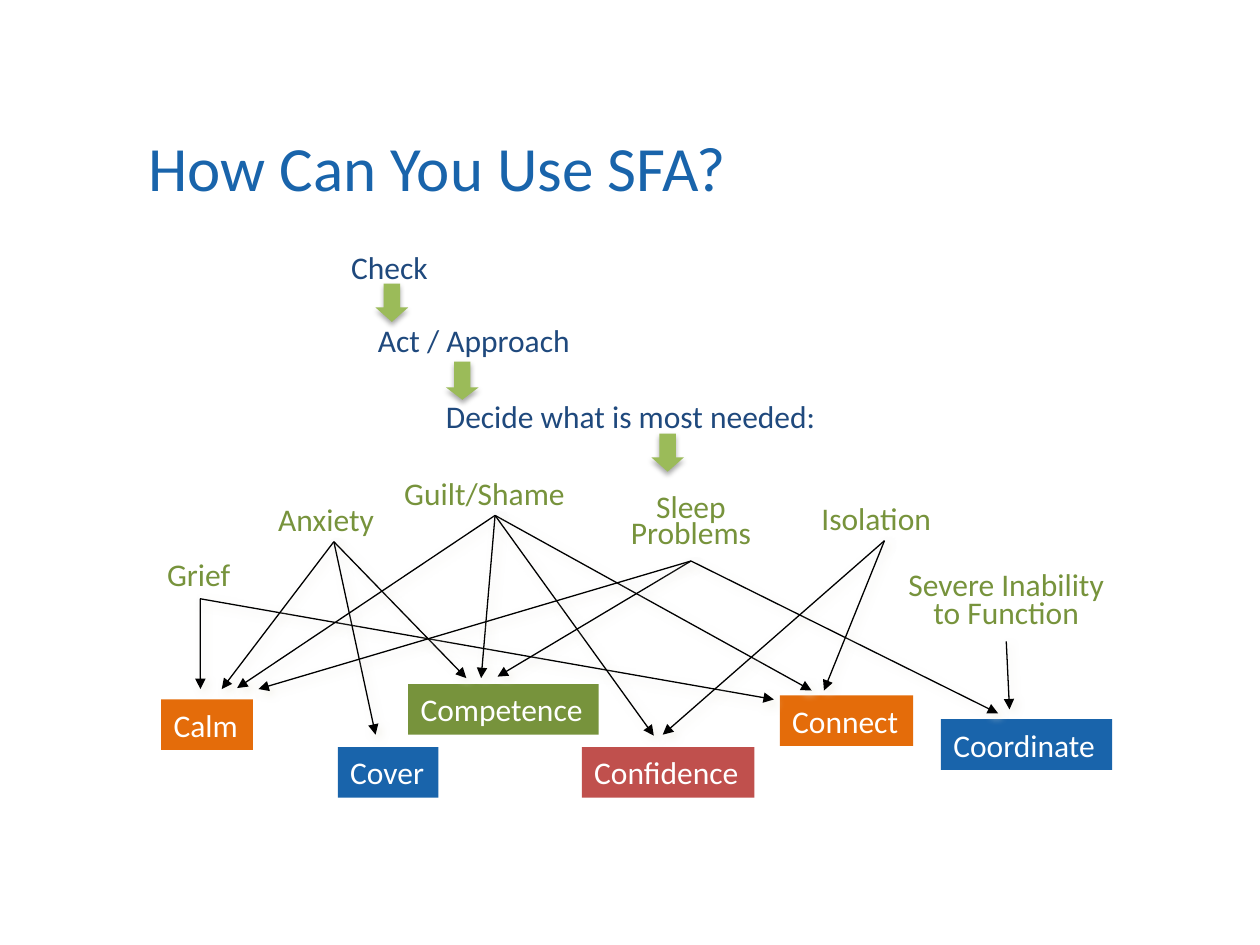
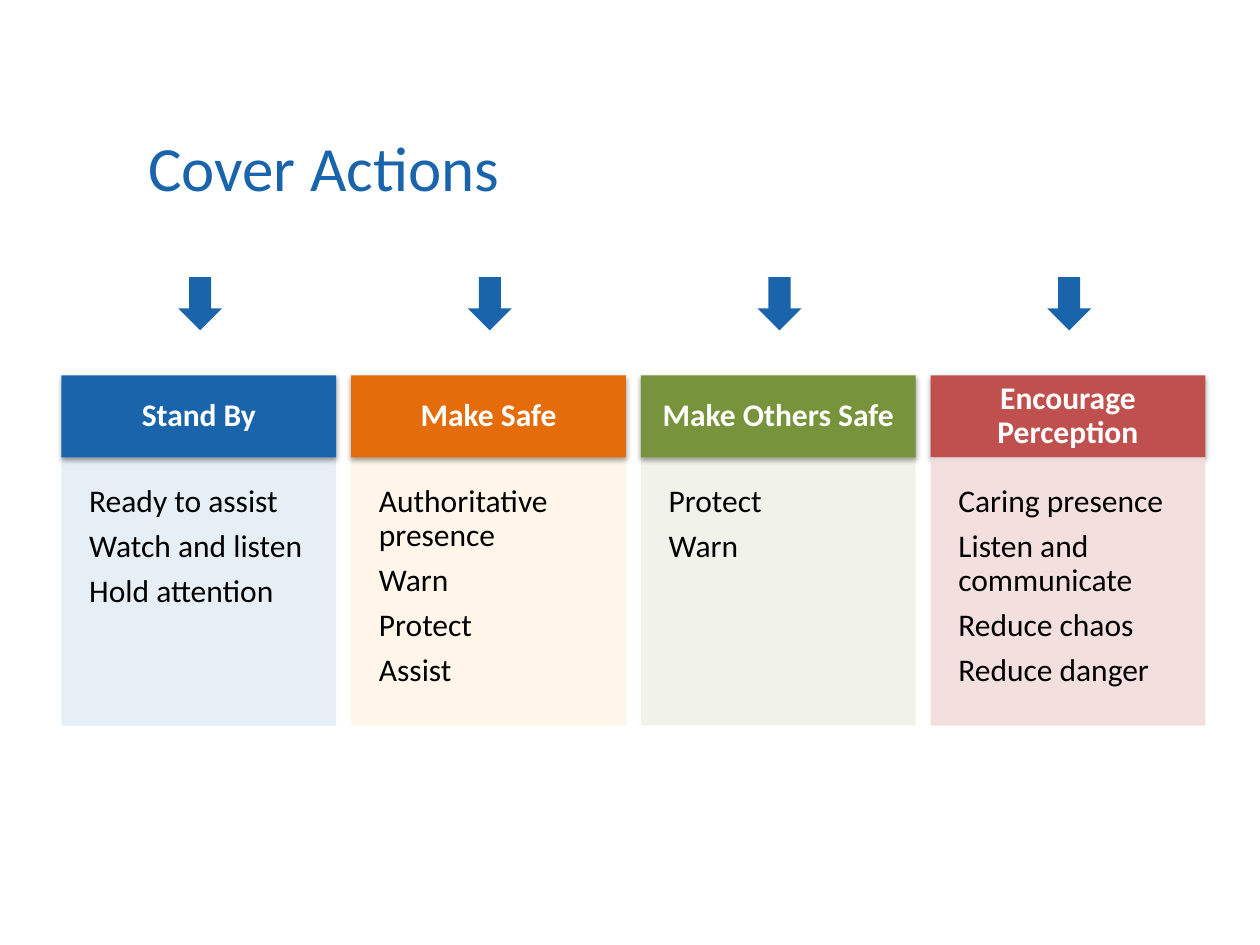
"""Build two slides: a needs-to-actions map and the four cover actions."""
from dataclasses import dataclass

from lxml import etree
from pptx import Presentation
from pptx.dml.color import RGBColor
from pptx.enum.shapes import MSO_CONNECTOR, MSO_SHAPE
from pptx.enum.text import MSO_ANCHOR, PP_ALIGN
from pptx.oxml.ns import qn
from pptx.shapes.autoshape import Shape
from pptx.shapes.connector import Connector
from pptx.slide import Slide
from pptx.util import Cm, Pt

RECT, DOWN = MSO_SHAPE.RECTANGLE, MSO_SHAPE.DOWN_ARROW
LINE = MSO_CONNECTOR.STRAIGHT
LEFT, MID = PP_ALIGN.LEFT, PP_ALIGN.CENTER
TOP, CENTRE, LOW = MSO_ANCHOR.TOP, MSO_ANCHOR.MIDDLE, MSO_ANCHOR.BOTTOM

FONT = "Calibri"
HEX = {
    "blue": "1964AB", "navy": "1F497D", "green": "77933C", "lime": "9BBB59",
    "orange": "E46C0A", "amber": "FFAE2D", "red": "C0504D", "pink": "F2DCDB",
    "white": "FFFFFF", "black": "000000", "cream": "EEECE1",
}
ROW = 1.02


@dataclass(frozen=True)
class Box:
    left: float
    top: float
    wide: float
    high: float = ROW


@dataclass(frozen=True)
class Style:
    ink: str
    size: float = 18
    bold: bool = False
    align: PP_ALIGN = LEFT
    anchor: MSO_ANCHOR = TOP
    pad: tuple[float, float, float, float] = (0.25, 0.13, 0, 0.13)
    leads: tuple[Pt | float, ...] = ()
    after: float = 0


@dataclass(frozen=True)
class Shade:
    tone: str
    alpha: int
    blur: float
    gap: float
    angle: int


@dataclass(frozen=True)
class Need:
    lines: tuple[str, ...]
    box: Box
    tips: tuple[tuple[float, float], ...]
    style: Style = Style("green")


@dataclass(frozen=True)
class Tag:
    word: str
    fill: str
    box: Box


@dataclass(frozen=True)
class Step:
    word: str
    box: Box
    arrow: tuple[float, float]
    adjust: float


@dataclass(frozen=True)
class Card:
    head: str
    lines: tuple[str, ...]
    fill: str
    tint: str
    alpha: int = 10


DROP = Shade("black", 35, 3.1, 1.8, 90)
HEAD_DROP = Shade("black", 38, 3.1, 1.6, 90)
GLOW = Shade("cream", 75, 5, 3, 45)

TITLE = Style("blue", 36, anchor=LOW)
BOTH = (0.25, 0.13, 0.25, 0.13)
PAIR = Style("green", align=MID, pad=BOTH, leads=(Pt(15.6), Pt(15.6)))
TIGHT = Style("green", align=MID, pad=BOTH, leads=(Pt(15.6), Pt(14.6)))
HEAD = Style("white", bold=True, align=MID, anchor=CENTRE,
             pad=(0.41,) * 4, leads=(0.9,), after=6.3)
BODY = Style("black", pad=(0.56,) * 4, leads=(0.9,) * 4, after=6.3)

STEPS = (
    Step("Check", Box(6.83, 4.88, 2.08), (7.57, 5.72), 0.44),
    Step("Act / Approach", Box(7.37, 6.35, 4.52), (8.99, 7.29), 0.38),
    Step("Decide what is most needed:", Box(8.74, 7.87, 9.17), (13.13, 8.74), 0.44),
)
NEEDS = (
    Need(("Grief",), Box(3.12, 11.05, 1.83), ((4.04, 13.89), (15.6, 14.1))),
    Need(("Anxiety",), Box(5.36, 9.96, 2.74, 0.96),
         ((4.47, 13.89), (7.57, 14.81), (9.4, 13.67))),
    Need(("Guilt/Shame",), Box(7.9, 9.42, 4.16, 0.97),
         ((4.78, 13.87), (9.7, 13.67), (16.36, 13.92), (13.18, 14.83))),
    Need(("Sleep", "Problems"), Box(12.42, 9.91, 3.02, 1.4),
         ((10.03, 13.64), (5.21, 13.89), (20.12, 14.38)), TIGHT),
    Need(("Isolation",), Box(16.31, 9.93, 3.04, 0.97),
         ((13.36, 14.81), (16.61, 13.92))),
    Need(("Severe Inability", "to Function"), Box(17.91, 11.48, 4.75, 1.45),
         ((20.35, 14.3),), PAIR),
)
TAGS = (
    Tag("Calm", "orange", Box(3.25, 14.1, 1.85)),
    Tag("Competence", "green", Box(8.23, 13.79, 3.84)),
    Tag("Connect", "orange", Box(15.72, 14.02, 2.69)),
    Tag("Coordinate", "blue", Box(18.97, 14.5, 3.45)),
    Tag("Cover", "blue", Box(6.81, 15.06, 2.03)),
    Tag("Confidence", "red", Box(11.73, 15.06, 3.48)),
)
CARDS = (
    Card("Stand By", ("Ready to assist", "Watch and listen", "Hold attention"),
         "blue", "blue"),
    Card("Make Safe", ("Authoritative presence", "Warn", "Protect", "Assist"),
         "orange", "amber"),
    Card("Make Others Safe", ("Protect", "Warn"), "green", "green"),
    Card("Encourage Perception",
         ("Caring presence", "Listen and communicate", "Reduce chaos", "Reduce danger"),
         "red", "pink", 90),
)


def rgb(name: str) -> RGBColor:
    return RGBColor.from_string(HEX[name])


def place(box: Box) -> tuple[Cm, Cm, Cm, Cm]:
    return Cm(box.left), Cm(box.top), Cm(box.wide), Cm(box.high)


def fade(tone: etree._Element, alpha: int) -> None:
    etree.SubElement(tone, qn("a:alpha"), val=str(alpha * 1000))


def shade(item: Shape | Connector, look: Shade) -> None:
    props = item.element.spPr
    group = props.find(qn("a:effectLst"))
    if group is None:
        group = etree.SubElement(props, qn("a:effectLst"))
    cast = etree.SubElement(
        group, qn("a:outerShdw"), blurRad=str(Pt(look.blur)), dist=str(Pt(look.gap)),
        dir=str(look.angle * 60000), algn="ctr", rotWithShape="0")
    fade(etree.SubElement(cast, qn("a:srgbClr"), val=HEX[look.tone]), look.alpha)


def write(item: Shape, lines: tuple[str, ...], style: Style) -> None:
    frame = item.text_frame
    frame.word_wrap = True
    frame.vertical_anchor = style.anchor
    (frame.margin_left, frame.margin_top,
     frame.margin_right, frame.margin_bottom) = map(Cm, style.pad)
    frame.text = "\n".join(lines)
    for para in frame.paragraphs:
        para.alignment = style.align
        para.space_after = Pt(style.after)
        para.font.name = FONT
        para.font.size = Pt(style.size)
        para.font.bold = style.bold
        para.font.color.rgb = rgb(style.ink)
    for para, lead in zip(frame.paragraphs, style.leads):
        para.line_spacing = lead


def label(slide: Slide, lines: tuple[str, ...], box: Box, style: Style) -> Shape:
    item = slide.shapes.add_textbox(*place(box))
    write(item, lines, style)
    return item


def block(slide: Slide, kind: MSO_SHAPE, box: Box, fill: str) -> Shape:
    item = slide.shapes.add_shape(kind, *place(box))
    item.shadow.inherit = False
    item.fill.solid()
    item.fill.fore_color.rgb = rgb(fill)
    item.line.fill.background()
    return item


def arrow(slide: Slide, start: Shape, tip: tuple[float, float]) -> None:
    link = slide.shapes.add_connector(
        LINE, start.left + start.width // 2, start.top + start.height, *map(Cm, tip))
    link.begin_connect(start, 2)
    link.line.color.rgb = rgb("black")
    link.line.width = Pt(0.75)
    etree.SubElement(link.element.spPr.find(qn("a:ln")), qn("a:tailEnd"), type="triangle")
    shade(link, GLOW)


def begin(deck: Presentation, title: str) -> Slide:
    slide = deck.slides.add_slide(deck.slide_layouts[6])
    label(slide, (title,), Box(2.74, 0.56, 18.85, 3.68), TITLE)
    return slide


def use_map(deck: Presentation) -> None:
    slide = begin(deck, "How Can You Use SFA?")
    for step in STEPS:
        label(slide, (step.word,), step.box, Style("navy"))
        mark = block(slide, DOWN, Box(*step.arrow, 0.66, 0.77), "lime")
        mark.adjustments[1] = step.adjust
        shade(mark, DROP)
    for tag in TAGS:
        write(block(slide, RECT, tag.box, tag.fill), (tag.word,), Style("white"))
    for need in NEEDS:
        start = label(slide, need.lines, need.box, need.style)
        for tip in need.tips:
            arrow(slide, start, tip)


def cover(deck: Presentation) -> None:
    slide = begin(deck, "Cover Actions")
    for col, card in enumerate(CARDS):
        left = 1.24 + col * 5.84
        head = block(slide, RECT, Box(left, 7.57, 5.54, 1.65), card.fill)
        shade(head, HEAD_DROP)
        write(head, (card.head,), HEAD)
        body = block(slide, RECT, Box(left, 9.22, 5.54, 5.41), card.tint)
        fade(body.element.spPr.find(qn("a:solidFill"))[0], card.alpha)
        write(body, card.lines, BODY)
        block(slide, DOWN, Box(left + 2.35, 5.59, 0.89, 1.07), "blue")


def main() -> None:
    deck = Presentation()
    deck.slide_width, deck.slide_height = Cm(25.4), Cm(19.05)
    use_map(deck)
    cover(deck)
    deck.save("out.pptx")


if __name__ == "__main__":
    main()
